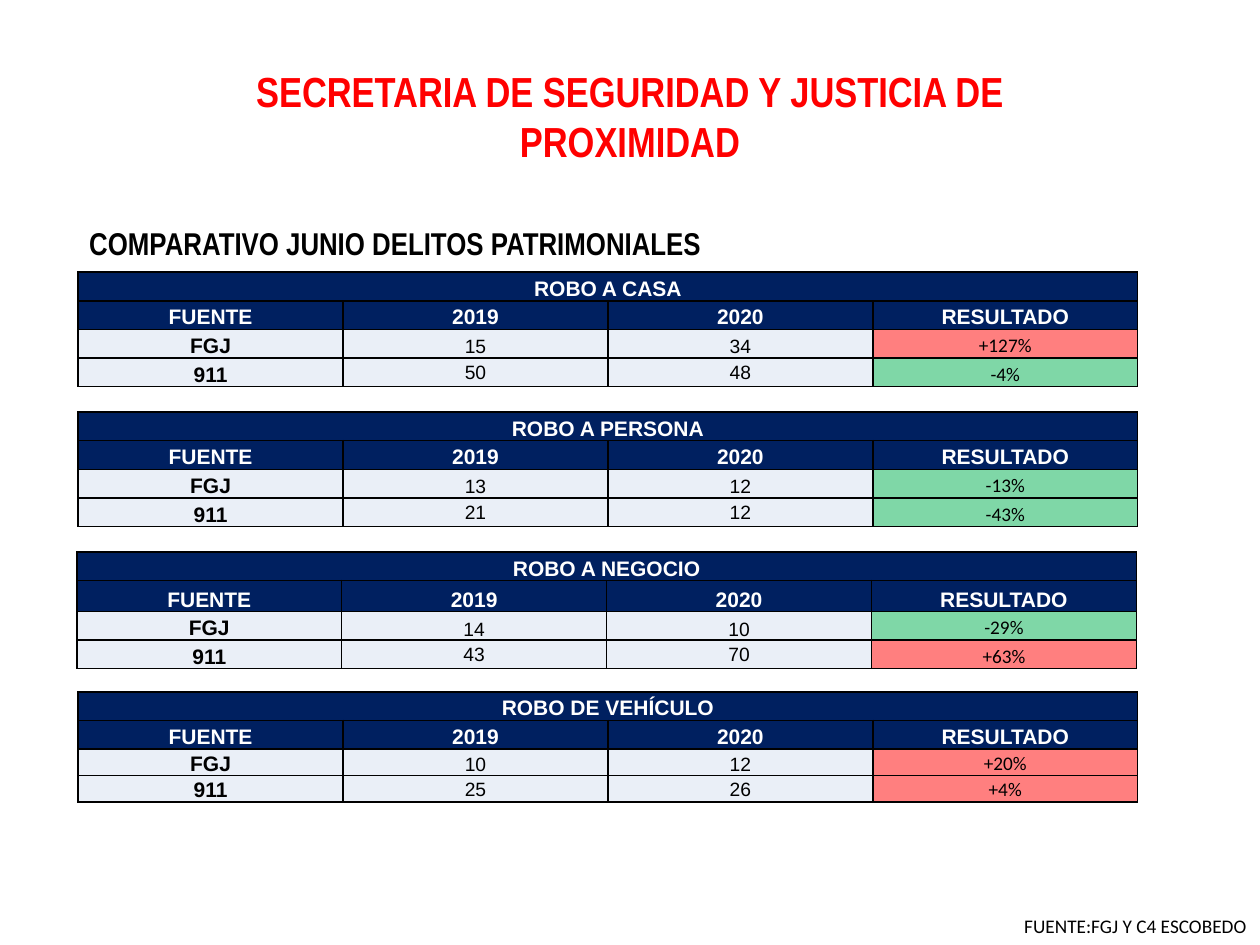
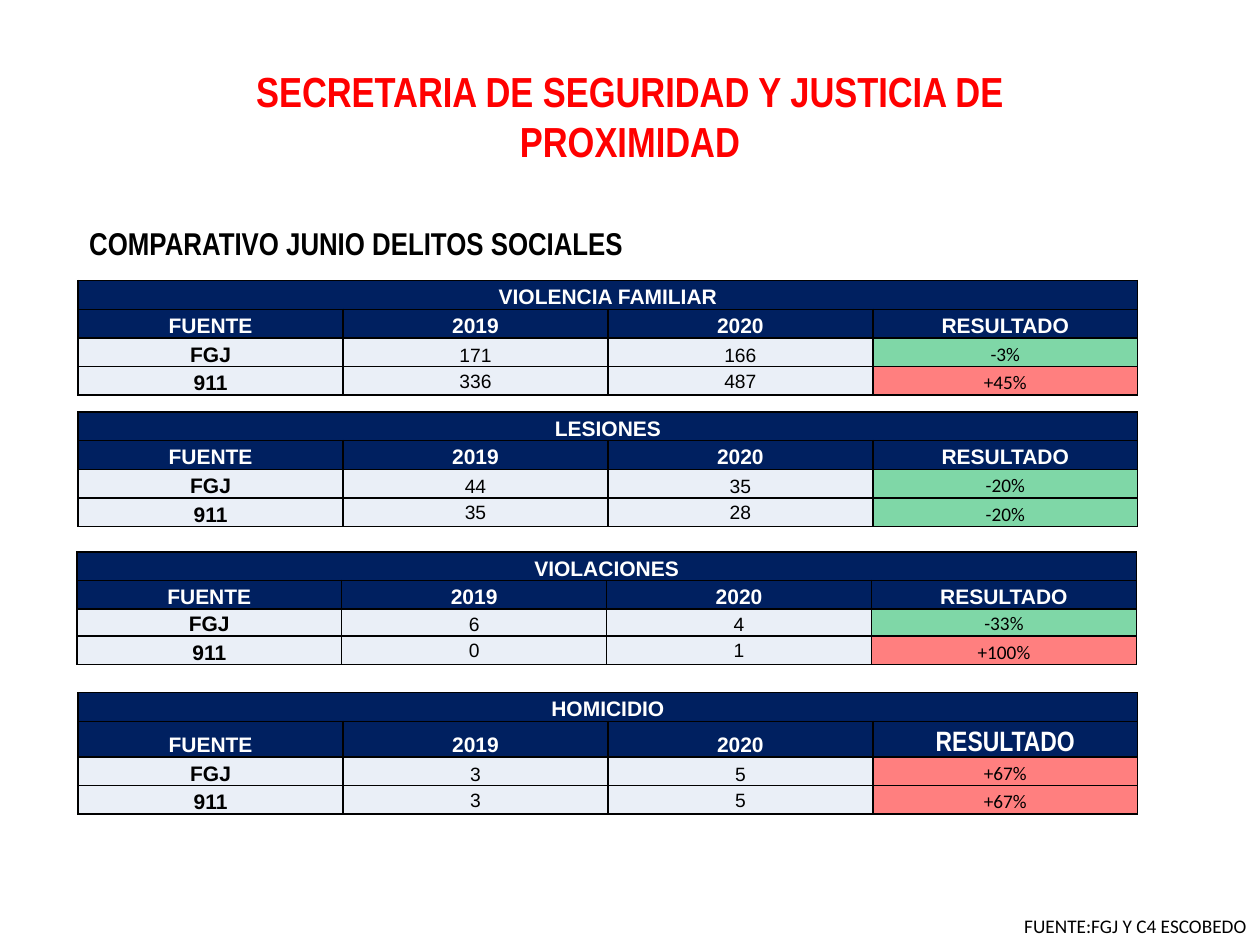
from dataclasses import dataclass

from lxml import etree
from pptx import Presentation
from pptx import util as u
from pptx.dml.color import RGBColor
from pptx.enum import text as t
from pptx.oxml import ns

WIDTH, HEIGHT = u.Inches(10), u.Inches(7.5)
ALIGN, ANCHOR = t.PP_ALIGN, t.MSO_ANCHOR


@dataclass(frozen=True)
class Style:
    name: str
    size: float
    color: str
    bold: bool = False


@dataclass(frozen=True)
class Theme:
    title: Style = Style("Arial Narrow", 24, "FF0000", True)
    topic: Style = Style("Arial Narrow", 18, "000000", True)
    foot: Style = Style("Calibri", 11, "000000")
    head: Style = Style("Arial", 12, "FFFFFF", True)
    large: Style = Style("Arial Narrow", 16, "FFFFFF", True)
    source: Style = Style("Arial", 12, "000000", True)
    count: Style = Style("Arial", 11, "000000")
    result: Style = Style("Calibri", 11, "000000")
    navy: str = "002060"
    pale: str = "EAEFF7"
    rise: str = "FF0000"
    drop: str = "00B050"
    line: str = "000000"
    alpha: int = 50


THEME = Theme()


@dataclass(frozen=True)
class Box:
    """Place in percent of the slide's width and height."""
    x: float
    y: float
    w: float
    h: float

    def emu(self) -> tuple[int, int, int, int]:
        return (across(self.x), down(self.y), across(self.w), down(self.h))


@dataclass(frozen=True)
class Crime:
    name: str
    fgj: tuple[str, str, str]
    calls: tuple[str, str, str]
    x: float = 6.2
    shift: float = 0
    rows: tuple[float, ...] = (3.03,) * 4
    last: Style = THEME.head


@dataclass(frozen=True)
class Page:
    topic: str
    crimes: tuple[Crime, ...]


# Shared layout, in percent of the slide
TITLE = Box(19, 6.27, 62, 12.13)
TOPIC = Box(6.1, 23.07, 73.8, 5.33)
FOOT = Box(80.3, 96.13, 19.8, 3.87)
TOP, PITCH, WIDE = 28.8, 14.8, 84.1
HEADS = ("FUENTE", "2019", "2020", "RESULTADO")

PAGES = (
    Page("COMPARATIVO JUNIO DELITOS PATRIMONIALES", (
        Crime("ROBO A CASA", ("15", "34", "+127%"), ("50", "48", "-4%")),
        Crime("ROBO A PERSONA", ("13", "12", "-13%"), ("21", "12", "-43%")),
        Crime("ROBO A NEGOCIO", ("14", "10", "-29%"), ("43", "70", "+63%"),
              x=6.1, rows=(3.03, 3.28, 3.03, 3.03)),
        Crime("ROBO DE VEHÍCULO", ("10", "12", "+20%"), ("25", "26", "+4%"),
              rows=(3.03, 3.03, 2.78, 2.78)),
    )),
    Page("COMPARATIVO JUNIO DELITOS SOCIALES", (
        Crime("VIOLENCIA FAMILIAR", ("171", "166", "-3%"),
              ("336", "487", "+45%"), shift=0.9),
        Crime("LESIONES", ("44", "35", "-20%"), ("35", "28", "-20%")),
        Crime("VIOLACIONES", ("6", "4", "-33%"), ("0", "1", "+100%"),
              x=6.1, rows=(3.03, 3.03, 2.85, 3.03)),
        Crime("HOMICIDIO", ("3", "5", "+67%"), ("3", "5", "+67%"),
              shift=0.1, rows=(3.03, 3.77, 3.03, 3.03), last=THEME.large),
    )),
)


def across(share: float) -> int:
    return round(WIDTH * share / 100)


def down(share: float) -> int:
    return round(HEIGHT * share / 100)


def assign(item, values: dict) -> None:
    for key, value in values.items():
        setattr(item, key, value)


def write(frame, words: str, style: Style, align) -> None:
    para = frame.paragraphs[0]
    para.alignment = align
    run = para.add_run()
    run.text = words
    assign(run.font, {"name": style.name, "size": u.Pt(style.size),
                      "bold": style.bold})
    run.font.color.rgb = RGBColor.from_string(style.color)


def label(slide, box: Box, words: str, style: Style,
          align=ALIGN.LEFT, wrap: bool = True) -> None:
    frame = slide.shapes.add_textbox(*box.emu()).text_frame
    assign(frame, {"word_wrap": wrap,
                   "auto_size": t.MSO_AUTO_SIZE.SHAPE_TO_FIT_TEXT})
    write(frame, words, style, align)


def paint(cell, color: str, alpha: int = 100) -> None:
    cell.fill.solid()
    cell.fill.fore_color.rgb = RGBColor.from_string(color)
    props = cell._tc.get_or_add_tcPr()
    if alpha < 100:
        tint = props.find(".//" + ns.qn("a:srgbClr"))
        etree.SubElement(tint, ns.qn("a:alpha"), val=str(alpha * 1000))
    # Borders go before the fill
    for spot, side in enumerate(("lnL", "lnR", "lnT", "lnB")):
        edge = etree.Element(ns.qn("a:" + side), w=str(u.Pt(1)))
        solid = etree.SubElement(edge, ns.qn("a:solidFill"))
        etree.SubElement(solid, ns.qn("a:srgbClr"), val=THEME.line)
        props.insert(spot, edge)


def look(crime: Crime, row: int, col: int, words: str) -> tuple[Style, str, int]:
    """Text style, fill and opacity of a cell."""
    if row < 2:
        return (crime.last if (row, col) == (1, 3) else THEME.head,
                THEME.navy, 100)
    if col == 3:
        tone = THEME.rise if words.startswith("+") else THEME.drop
        return THEME.result, tone, THEME.alpha
    return (THEME.count if col else THEME.source), THEME.pale, 100


def compare(slide, crime: Crime, y: float) -> None:
    box = Box(crime.x, y + crime.shift, WIDE, sum(crime.rows))
    grid = slide.shapes.add_table(4, len(HEADS), *box.emu()).table
    assign(grid, {"first_row": False, "horz_banding": False})
    for row, high in zip(grid.rows, crime.rows):
        row.height = down(high)
    lines = ((crime.name, "", "", ""), HEADS,
             ("FGJ", *crime.fgj), ("911", *crime.calls))
    for r, line in enumerate(lines):
        for c, words in enumerate(line):
            cell = grid.cell(r, c)
            middle = r == 3 and c in (1, 2)
            inset = u.Inches(0.01)
            assign(cell, {
                "margin_left": inset, "margin_right": inset,
                "margin_top": inset, "margin_bottom": 0,
                "vertical_anchor": ANCHOR.MIDDLE if middle else ANCHOR.BOTTOM})
            style, color, alpha = look(crime, r, c, words)
            paint(cell, color, alpha)
            if words:
                write(cell.text_frame, words, style, ALIGN.CENTER)
    grid.cell(0, 0).merge(grid.cell(0, 3))


def draw(deck, page: Page) -> None:
    slide = deck.slides.add_slide(deck.slide_layouts[6])
    label(slide, TITLE, "SECRETARIA DE SEGURIDAD Y JUSTICIA DE PROXIMIDAD",
          THEME.title, ALIGN.CENTER)
    label(slide, TOPIC, page.topic, THEME.topic)
    for i, crime in enumerate(page.crimes):
        compare(slide, crime, TOP + i * PITCH)
    label(slide, FOOT, "FUENTE:FGJ Y C4 ESCOBEDO", THEME.foot, wrap=False)


def main() -> None:
    deck = Presentation()
    assign(deck, {"slide_width": WIDTH, "slide_height": HEIGHT})
    for page in PAGES:
        draw(deck, page)
    deck.save("out.pptx")


if __name__ == "__main__":
    main()
